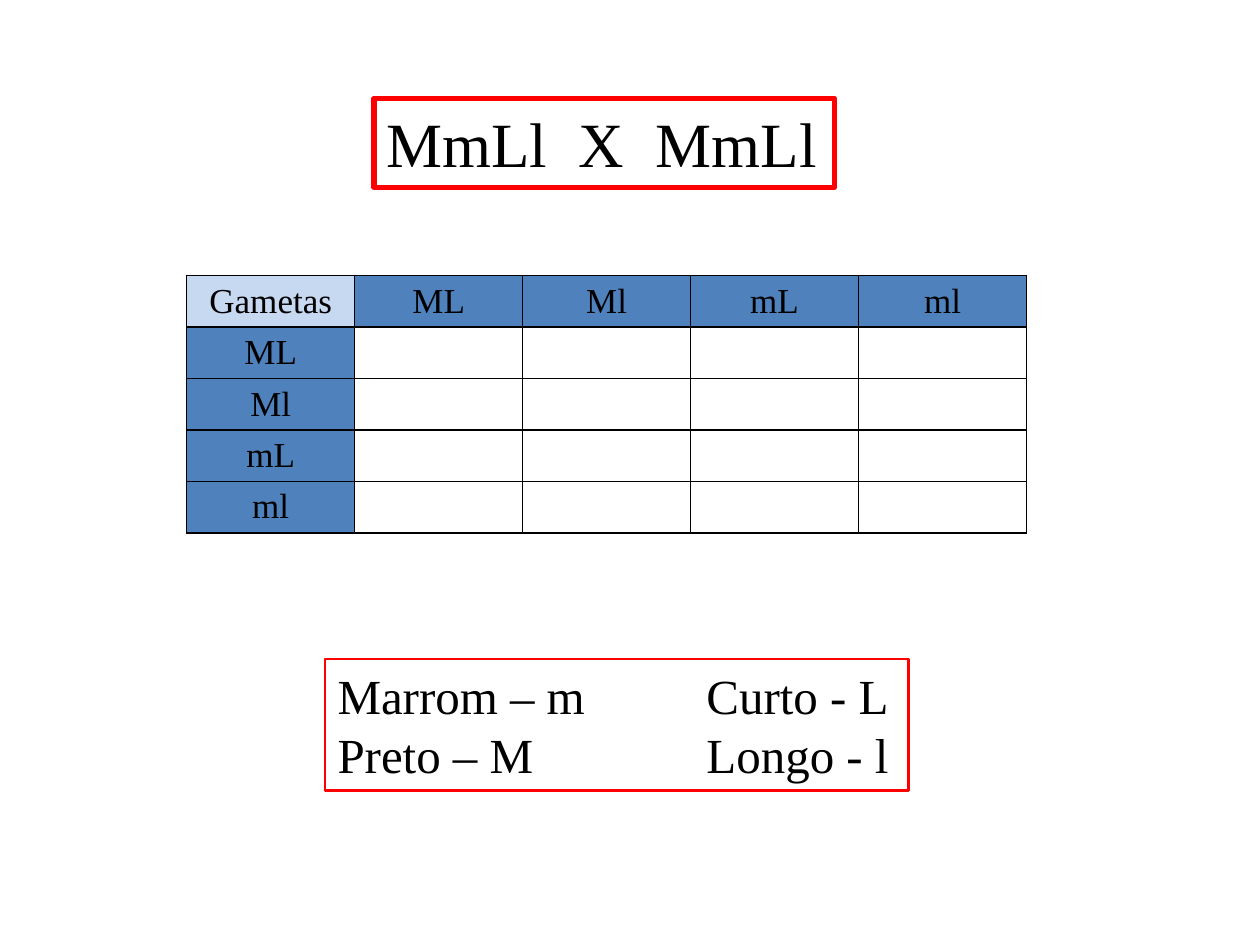
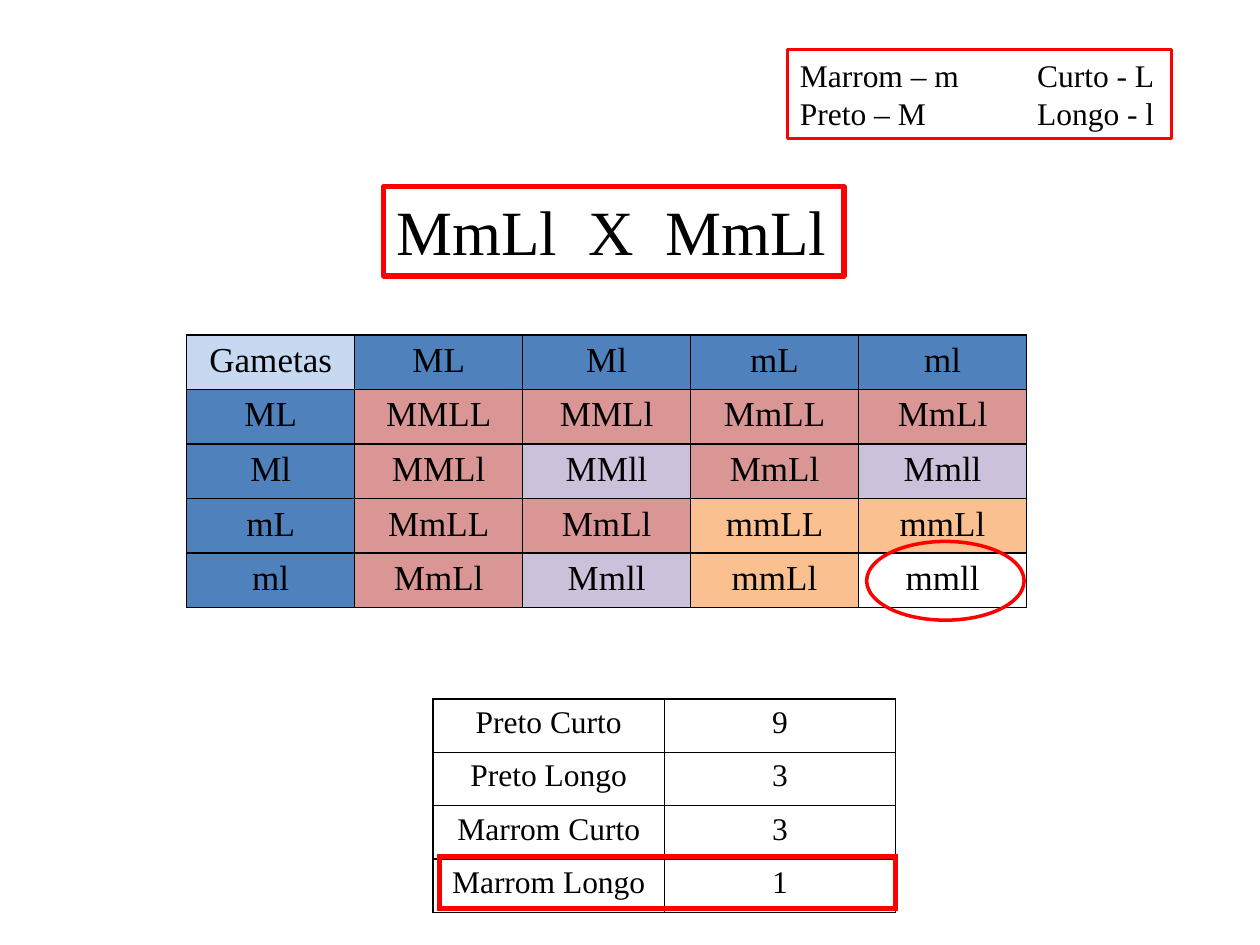
from dataclasses import dataclass
from itertools import product
from typing import Optional

from lxml import etree
from pptx import Presentation
from pptx import util as u
from pptx.dml.color import RGBColor
from pptx.enum import shapes, text
from pptx.oxml import ns

Pt = u.Pt
FONT = "Times New Roman"
COLORS = {
    "ink": "000000",
    "red": "FF0000",
    "white": "FFFFFF",
    "corner": "C6D9F1",
    "gamete": "4F81BD",
    "black_short": "D99694",
    "black_long": "CCC1DA",
    "brown_short": "FAC090",
}
GAMETES = ["".join(pair) for pair in product("Mm", "Ll")]
PHENOTYPES = {
    (True, True): "black_short",
    (True, False): "black_long",
    (False, True): "brown_short",
    (False, False): None,
}
CROSS = "MmLl  X  MmLl"
LEGEND = [("Marrom – m", "Curto - L"), ("Preto – M", "Longo - l")]
LEGEND_TAB = 7.53
RATIOS = [("Preto Curto", "9"), ("Preto Longo", "3"),
          ("Marrom Curto", "3"), ("Marrom Longo", "1")]


@dataclass
class Box:
    x: float
    y: float
    w: float
    h: float


@dataclass
class Cell:
    label: str = ""
    fill: Optional[str] = None


def rgb(name: str) -> RGBColor:
    return RGBColor.from_string(COLORS[name])


def write(p, content: str, *, size: float, align=text.PP_ALIGN.LEFT,
          color: str = "ink", tab: Optional[float] = None) -> None:
    p.alignment = align
    if tab is not None:
        tabs = etree.SubElement(p._p.get_or_add_pPr(), ns.qn("a:tabLst"))
        etree.SubElement(tabs, ns.qn("a:tab"), pos=str(Pt(tab)), algn="l")
    r = p.add_run()
    r.text = content
    r.font.name = FONT
    r.font.size = Pt(size)
    r.font.color.rgb = rgb(color)


def outline(sp, width: float) -> None:
    sp.fill.background()
    sp.line.color.rgb = rgb("red")
    sp.line.width = Pt(width)


def add_framed_text(s, box: Box, lines: list[str], *, size: float,
                    width: float, tab: Optional[float] = None) -> None:
    sp = s.shapes.add_textbox(Pt(box.x), Pt(box.y), Pt(box.w), Pt(box.h))
    outline(sp, width)
    tf = sp.text_frame
    tf.word_wrap = tab is not None
    for i, line in enumerate(lines):
        p = tf.add_paragraph() if i else tf.paragraphs[0]
        write(p, line, size=size, tab=tab)


def add_cross(s, x: float, y: float) -> None:
    add_framed_text(s, Box(x, y, 263, 51), [CROSS], size=36, width=3)


def add_legend(s, box: Box, size: float) -> None:
    lines = ["\t".join(pair) for pair in LEGEND]
    add_framed_text(s, box, lines, size=size, width=1.5, tab=LEGEND_TAB * size)


def set_borders(cell, color: str, width: float) -> None:
    tc_pr = cell._tc.get_or_add_tcPr()
    for side in ("lnL", "lnR", "lnT", "lnB"):
        ln = etree.SubElement(tc_pr, ns.qn(f"a:{side}"), w=str(Pt(width)))
        fill = etree.SubElement(ln, ns.qn("a:solidFill"))
        etree.SubElement(fill, ns.qn("a:srgbClr"), val=COLORS[color])


def add_grid(s, box: Box, rows: list[list[Cell]], *, size: float = 18,
             border: str = "ink", width: float = 1) -> None:
    n_rows, n_cols = len(rows), len(rows[0])
    table = s.shapes.add_table(n_rows, n_cols, Pt(box.x), Pt(box.y),
                               Pt(box.w), Pt(box.h)).table
    table.first_row = table.horz_banding = False
    for column in table.columns:
        column.width = Pt(box.w / n_cols)
    for i, row in enumerate(rows):
        table.rows[i].height = Pt(box.h / n_rows)
        for j, item in enumerate(row):
            cell = table.cell(i, j)
            cell.margin_bottom = Pt(2)
            set_borders(cell, border, width)
            if item.fill:
                cell.fill.solid()
                cell.fill.fore_color.rgb = rgb(item.fill)
            else:
                cell.fill.background()
            if item.label:
                write(cell.text_frame.paragraphs[0], item.label, size=size,
                      align=text.PP_ALIGN.CENTER)


def offspring(a: str, b: str) -> Cell:
    genotype = "".join("".join(sorted(pair)) for pair in zip(a, b))
    return Cell(genotype, PHENOTYPES["M" in genotype, "L" in genotype])


def add_punnett(s, y: float, height: float, solved: bool) -> None:
    rows = [[Cell("Gametas", "corner")] + [Cell(g, "gamete") for g in GAMETES]]
    for a in GAMETES:
        crosses = [offspring(a, b) if solved else Cell() for b in GAMETES]
        rows.append([Cell(a, "gamete")] + crosses)
    add_grid(s, Box(106.7, y, 480, height), rows, size=20)


def add_question(s) -> None:
    add_punnett(s, 157.5, 147, solved=False)
    add_cross(s, 213.7, 56.2)
    add_legend(s, Box(185.8, 376.7, 333.4, 75), 28)


def add_answer(s) -> None:
    add_punnett(s, 191.3, 156, solved=True)
    ratios = [[Cell(label, "white") for label in row] for row in RATIOS]
    add_grid(s, Box(247.5, 399.5, 264.4, 122), ratios)
    add_legend(s, Box(450, 28.3, 219.6, 51), 18)
    add_cross(s, 219.3, 106.7)
    add_grid(s, Box(251.3, 489.5, 260.6, 29.5), [[Cell()]], border="red", width=3)
    sp = s.shapes.add_shape(shapes.MSO_SHAPE.OVAL, Pt(495.2), Pt(309.4),
                            Pt(90), Pt(45))
    sp.shadow.inherit = False
    outline(sp, 2)


def main() -> None:
    prs = Presentation()
    prs.slide_width, prs.slide_height = Pt(720), Pt(540)
    for build in (add_question, add_answer):
        build(prs.slides.add_slide(prs.slide_layouts[6]))
    prs.save("out.pptx")


if __name__ == "__main__":
    main()
